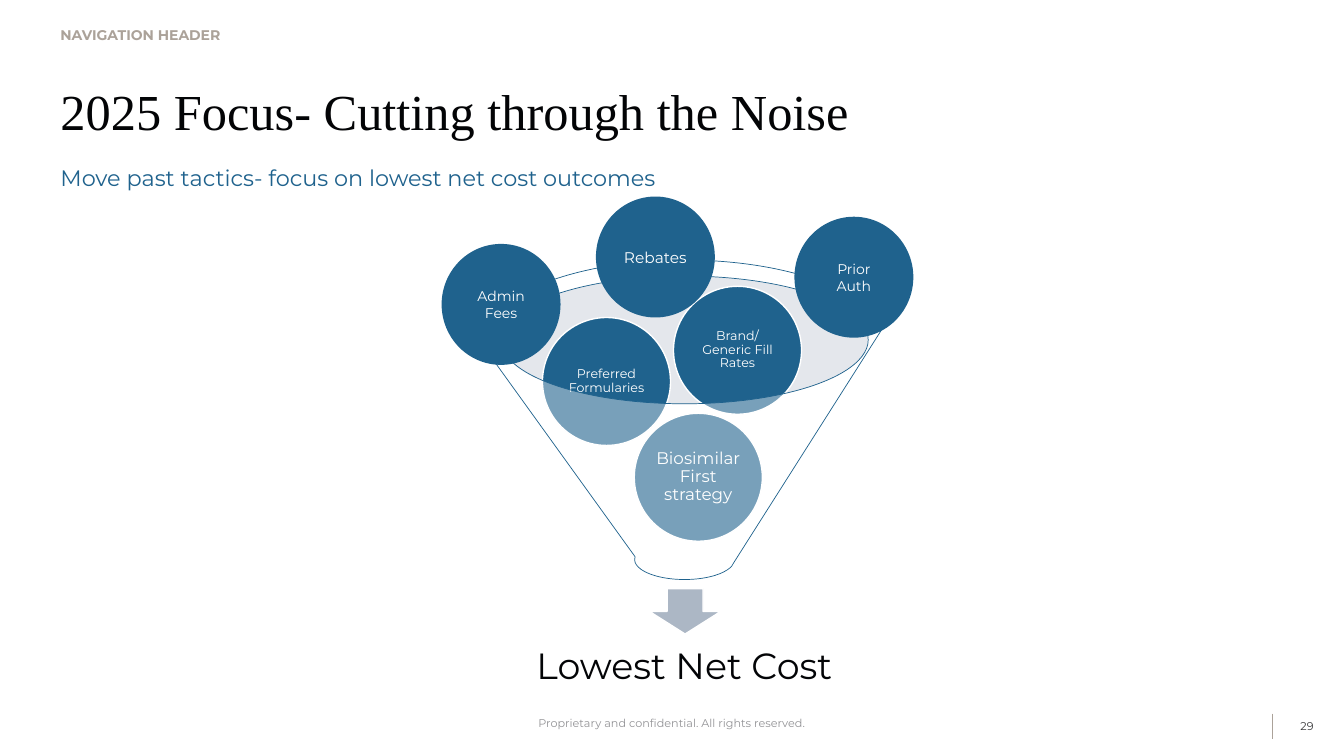
from dataclasses import dataclass

from lxml.etree import SubElement
from pptx import Presentation
from pptx.dml.color import RGBColor
from pptx.enum.shapes import MSO_CONNECTOR, MSO_SHAPE
from pptx.enum.text import MSO_ANCHOR, MSO_AUTO_SIZE, PP_ALIGN
from pptx.oxml.ns import qn
from pptx.util import Inches, Pt

WIDE, HIGH = Inches(13.33), Inches(7.5)
SANS, SERIF = "Montserrat", "Times New Roman"
LEFT, MID, RIGHT = PP_ALIGN.LEFT, PP_ALIGN.CENTER, PP_ALIGN.RIGHT
HUE = {
    "blue": "1F628D", "white": "FFFFFF", "ink": "030406", "sand": "ABA299",
    "rim": "BDC5D0", "arrow": "ACB7C5", "foot": "939396", "page": "39393B",
}


@dataclass
class Box:
    x: float
    y: float
    w: float
    h: float

    def place(self) -> tuple[int, int, int, int]:
        return across(self.x), down(self.y), across(self.w), down(self.h)


@dataclass
class Type:
    size: float
    hue: str = "white"
    font: str = SANS
    bold: bool = False
    align: PP_ALIGN = MID
    anchor: MSO_ANCHOR = MSO_ANCHOR.MIDDLE
    pitch: float = 1.0
    pad: tuple[float, float] = (0, 0)


@dataclass
class Form:
    kind: MSO_SHAPE
    box: Box
    fill: str
    line: str = ""
    weight: float = 1
    alpha: int = 100
    text: str = ""
    type: Type | None = None


@dataclass
class Label:
    text: str
    box: Box
    type: Type


def across(share: float) -> int:
    return round(WIDE * share / 100)


def down(share: float) -> int:
    return round(HIGH * share / 100)


def tint(name: str) -> RGBColor:
    return RGBColor.from_string(HUE[name])


def write(frame, text: str, style: Type) -> None:
    frame.text = text
    frame.word_wrap = True
    frame.auto_size = MSO_AUTO_SIZE.NONE
    frame.vertical_anchor = style.anchor
    side, top = style.pad
    frame.margin_left = frame.margin_right = Inches(side)
    frame.margin_top = frame.margin_bottom = Inches(top)
    para = frame.paragraphs[0]
    para.alignment = style.align
    para.line_spacing = style.pitch
    para.space_before = Pt(0)
    font = para.font
    font.name, font.size, font.bold = style.font, Pt(style.size), style.bold
    font.color.rgb = tint(style.hue)


def draw(slide, form: Form) -> None:
    shape = slide.shapes.add_shape(form.kind, *form.box.place())
    shape.shadow.inherit = False
    shape.fill.solid()
    shape.fill.fore_color.rgb = tint(form.fill)
    if form.alpha < 100:
        color = shape.fill._xPr.find(".//" + qn("a:srgbClr"))
        SubElement(color, qn("a:alpha")).set("val", str(form.alpha * 1000))
    if form.line:
        shape.line.color.rgb = tint(form.line)
        shape.line.width = Pt(form.weight)
    else:
        shape.line.fill.background()
    if form.type:
        write(shape.text_frame, form.text, form.type)


def label(slide, item: Label) -> None:
    area = slide.shapes.add_textbox(*item.box.place())
    write(area.text_frame, item.text, item.type)


def fill(holder, item: Label) -> None:
    holder.left, holder.top, holder.width, holder.height = item.box.place()
    write(holder.text_frame, item.text, item.type)


def outer(text: str, x: float, y: float, size: float) -> Form:
    return Form(MSO_SHAPE.OVAL, Box(x, y, 8.85, 16), "blue",
                text=text, type=Type(size, pad=(0.08, 0.05)))


def inner(text: str, x: float, y: float, size: float) -> Form:
    return Form(MSO_SHAPE.OVAL, Box(x, y, 9.53, 16.93), "blue", "white",
                text=text, type=Type(size, pitch=0.9, pad=(0.01, 0.01)))


HEADS = {
    0: Label("2025 Focus- Cutting through the Noise", Box(4.5, 7.33, 90, 12),
             Type(36, "ink", SERIF, align=LEFT, anchor=MSO_ANCHOR.BOTTOM,
                  pad=(0, 0.05))),
    1: Label("Move past tactics- focus on lowest net cost outcomes",
             Box(4.5, 20.67, 90, 8),
             Type(16, "blue", align=LEFT, anchor=MSO_ANCHOR.TOP, pitch=1.1,
                  pad=(0, 0.05))),
    3: Label("NAVIGATION HEADER", Box(4.5, 2.67, 45, 4),
             Type(10, "sand", bold=True, align=LEFT, pad=(0, 0.05))),
}
FORMS = [
    Form(MSO_SHAPE.OVAL, Box(37.21, 36.53, 27.38, 16.93), "rim", alpha=40),
    Form(MSO_SHAPE.DOWN_ARROW, Box(48.31, 77.87, 5.33, 6), "arrow", "white"),
    inner("Biosimilar First strategy", 47.19, 54.67, 12),
    inner("Preferred Formularies", 40.36, 42, 9),
    inner("Brand/ Generic Fill Rates", 50.11, 37.87, 9),
    Form(MSO_SHAPE.FUNNEL, Box(36.08, 34.4, 29.71, 42.27), "white", "blue",
         0.5, 40),
    outer("Rebates", 44.34, 26, 11),
    outer("Prior Auth", 59.11, 28.67, 10),
    outer("Admin Fees", 32.86, 32.27, 10),
]
LABELS = [
    Label("Lowest Net Cost", Box(38.18, 82.67, 25.5, 11.33),
          Type(26, "ink", pitch=0.9, pad=(0.1, 0.2))),
    Label("Proprietary and confidential. All rights reserved.",
          Box(35, 94.8, 30, 1.73), Type(8, "foot")),
    Label("29", Box(94.75, 94.4, 3, 3.33), Type(8, "page", align=RIGHT)),
]


def main() -> None:
    deck = Presentation()
    deck.slide_width, deck.slide_height = WIDE, HIGH
    slide = deck.slides.add_slide(deck.slide_layouts[4])
    for holder in list(slide.placeholders):
        item = HEADS.get(holder.placeholder_format.idx)
        if item:
            fill(holder, item)
        else:
            holder.element.getparent().remove(holder.element)
    for form in FORMS:
        draw(slide, form)
    for item in LABELS:
        label(slide, item)
    rule = slide.shapes.add_connector(
        MSO_CONNECTOR.STRAIGHT, across(94.67), down(94.4),
        across(94.67), down(97.73))
    rule.line.color.rgb = tint("sand")
    rule.line.width = Pt(0.5)
    SubElement(rule.element.spPr, qn("a:effectLst"))
    deck.save("out.pptx")


if __name__ == "__main__":
    main()
